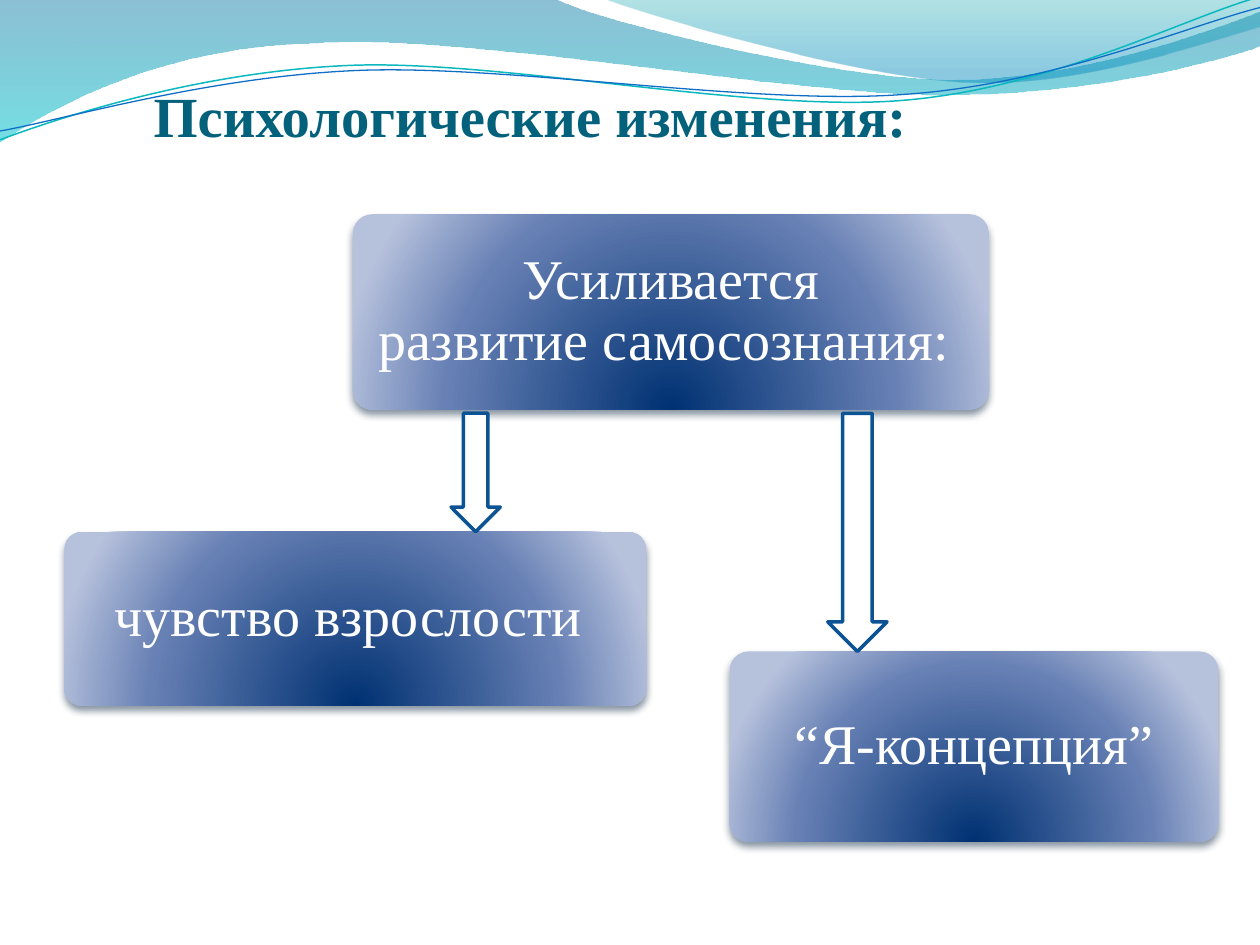
from dataclasses import dataclass

from lxml import etree
from pptx import Presentation, util as u
from pptx.dml.color import RGBColor
from pptx.enum import shapes, text
from pptx.oxml import ns

Inches, Pt = u.Inches, u.Pt
NO_BREAK_SPACE = chr(160)


@dataclass(frozen=True)
class Theme:
    font: str = "Times New Roman"
    title_size: float = 32.4
    body_size: float = 32
    title: str = "04617B"
    white: str = "FFFFFF"
    arrow: str = "0B5394"
    teal_line: str = "0AB8BF"
    blue_line: str = "0F6FC6"
    shadow: str = "031F39"
    # Gradient stops: position %, colour, opacity %
    wide_wave: tuple = ((0, "0074A1", 45), (100, "00C6CF", 55))
    right_wave: tuple = ((0, "00A1A9", 30), (80, "008BBF", 45))
    panel: tuple = ((0, "003172", 100), (68, "6881B5", 100), (100, "B6C1DC", 100))


THEME = Theme()
DOWN = {"ang": "5400000", "scaled": "0"}
GLOW = {"l": "50000", "t": "130000", "r": "50000", "b": "-30000"}

# Outlines in inches: a pair is a straight step, six numbers are a Bezier curve
WIDE_WAVE = [
    (0, 0), (4.4, -0.01),
    (4.76, 0.17, 6.64, 0.63, 7.58, 0.63), (8.53, 0.63, 9.58, 0.26, 10, 0.09),
    (10.01, 0.36),
    (9.83, 0.44, 8.7, 0.76, 7.46, 0.75), (6.22, 0.75, 3.82, 0.28, 2.57, 0.34),
    (1.29, 0.36, 0.46, 0.83, -0.01, 1.13),
]
RIGHT_WAVE = [
    (4.79, -0.01),
    (5.09, 0.11, 6.82, 0.62, 7.69, 0.65), (8.56, 0.69, 9.61, 0.32, 10, 0.21),
    (10, 0),
]
TEAL_CURVE = [
    (0, 1.11), (0.48, 0.93, 1.58, 0.57, 2.77, 0.52),
    (3.95, 0.47, 5.93, 0.89, 7.13, 0.8), (8.33, 0.71, 9.38, 0.15, 9.98, -0.02),
]
BLUE_CURVE = [
    (0, 1.04), (0.47, 0.96, 1.64, 0.61, 2.83, 0.56),
    (4.03, 0.51, 5.97, 0.84, 7.17, 0.75), (8.36, 0.67, 9.41, 0.21, 10, 0.06),
]


def rgb(value):
    return RGBColor.from_string(value)


def add_color(parent, value, opacity):
    color = etree.SubElement(parent, ns.qn("a:srgbClr"), val=value)
    if opacity < 100:
        etree.SubElement(color, ns.qn("a:alpha"), val=str(opacity * 1000))


def gradient_fill(shape, stops, radial=False):
    """Fill with stops that may be see-through, downwards or as a glow."""
    shape.fill.background()
    empty = shape._element.spPr.find(ns.qn("a:noFill"))
    fill = etree.Element(ns.qn("a:gradFill"), rotWithShape="1")
    stop_list = etree.SubElement(fill, ns.qn("a:gsLst"))
    for position, color, opacity in stops:
        stop = etree.SubElement(stop_list, ns.qn("a:gs"), pos=str(position * 1000))
        add_color(stop, color, opacity)
    if radial:
        glow = etree.SubElement(fill, ns.qn("a:path"), path="circle")
        etree.SubElement(glow, ns.qn("a:fillToRect"), GLOW)
    else:
        etree.SubElement(fill, ns.qn("a:lin"), DOWN)
    empty.getparent().replace(empty, fill)


def drop_shadow(shape):
    shape.shadow.inherit = False
    effects = shape._element.spPr.find(ns.qn("a:effectLst"))
    shadow = etree.SubElement(
        effects, ns.qn("a:outerShdw"), blurRad=str(Pt(4.5)), dist=str(Pt(3)),
        dir="5400000", rotWithShape="0")
    add_color(shadow, THEME.shadow, 48)


def add_outline(page, outline, closed):
    """Draw straight steps through all points, then join triples into curves."""
    points = [(Inches(part[i]), Inches(part[i + 1]))
              for part in outline for i in range(0, len(part), 2)]
    builder = page.shapes.build_freeform(*points[0])
    builder.add_line_segments(points[1:], close=closed)
    shape = builder.convert_to_shape()
    shape.shadow.inherit = False
    steps = iter(list(shape._element.spPr.iter(ns.qn("a:lnTo"))))
    for part in outline[1:]:
        step = next(steps)
        if len(part) == 6:
            curve = etree.Element(ns.qn("a:cubicBezTo"))
            step.addprevious(curve)
            for control in (step, next(steps), next(steps)):
                curve.append(control[0])
                control.getparent().remove(control)
    return shape


def add_waves(page):
    for outline, stops in ((WIDE_WAVE, THEME.wide_wave), (RIGHT_WAVE, THEME.right_wave)):
        wave = add_outline(page, outline, closed=True)
        gradient_fill(wave, stops)
        wave.line.fill.background()
    for outline, color, width in (
            (TEAL_CURVE, THEME.teal_line, 0.85), (BLUE_CURVE, THEME.blue_line, 0.75)):
        curve = add_outline(page, outline, closed=False)
        curve.fill.background()
        curve.line.color.rgb = rgb(color)
        curve.line.width = Pt(width)


def write(shape, words, size, color, anchor, align, bold=False):
    frame = shape.text_frame
    frame.text = words
    frame.word_wrap = True
    frame.vertical_anchor = anchor
    para = frame.paragraphs[0]
    para.alignment = align
    font = para.runs[0].font
    font.name, font.size, font.bold = THEME.font, Pt(size), bold
    font.color.rgb = rgb(color)
    return frame


def add_title(page, box, words):
    title = page.shapes.add_textbox(*map(Inches, box))
    frame = write(title, words, THEME.title_size, THEME.title,
                  text.MSO_ANCHOR.TOP, text.PP_ALIGN.LEFT, bold=True)
    frame.margin_left = frame.margin_right = 0
    frame.margin_top = frame.margin_bottom = 0


def add_panel(page, box, words):
    panel = page.shapes.add_shape(
        shapes.MSO_SHAPE.ROUNDED_RECTANGLE, *map(Inches, box))
    panel.adjustments[0] = 0.1
    gradient_fill(panel, THEME.panel, radial=True)
    panel.line.fill.background()
    drop_shadow(panel)
    frame = write(panel, words, THEME.body_size, THEME.white,
                  text.MSO_ANCHOR.MIDDLE, text.PP_ALIGN.CENTER)
    frame.margin_left = frame.margin_right = Inches(0.02)
    frame.margin_top = frame.margin_bottom = Inches(0.02)
    frame.paragraphs[0].line_spacing = 0.9


def add_arrow(page, box):
    arrow = page.shapes.add_shape(shapes.MSO_SHAPE.DOWN_ARROW, *map(Inches, box))
    arrow.shadow.inherit = False
    arrow.fill.solid()
    arrow.fill.fore_color.rgb = rgb(THEME.white)
    arrow.line.color.rgb = rgb(THEME.arrow)
    arrow.line.width = Pt(2)


def main():
    deck = Presentation()
    deck.slide_width, deck.slide_height = Inches(10), Inches(7.5)
    page = deck.slides.add_slide(deck.slide_layouts[6])

    # Heading
    add_waves(page)
    add_title(page, (1.22, 0.64, 9, 1.25), "Психологические изменения:")

    # Main idea and its two outcomes
    add_panel(page, (2.8, 1.7, 5.05, 1.55),
              f"Усиливается развитие{NO_BREAK_SPACE}самосознания: ")
    add_panel(page, (0.51, 4.22, 4.62, 1.38), "чувство взрослости ")
    add_panel(page, (5.79, 5.17, 3.88, 1.51), "“Я-концепция”")

    # Arrows down to the outcomes
    add_arrow(page, (3.58, 3.28, 0.39, 0.94))
    add_arrow(page, (6.57, 3.28, 0.47, 1.89))

    deck.save("out.pptx")


if __name__ == "__main__":
    main()
